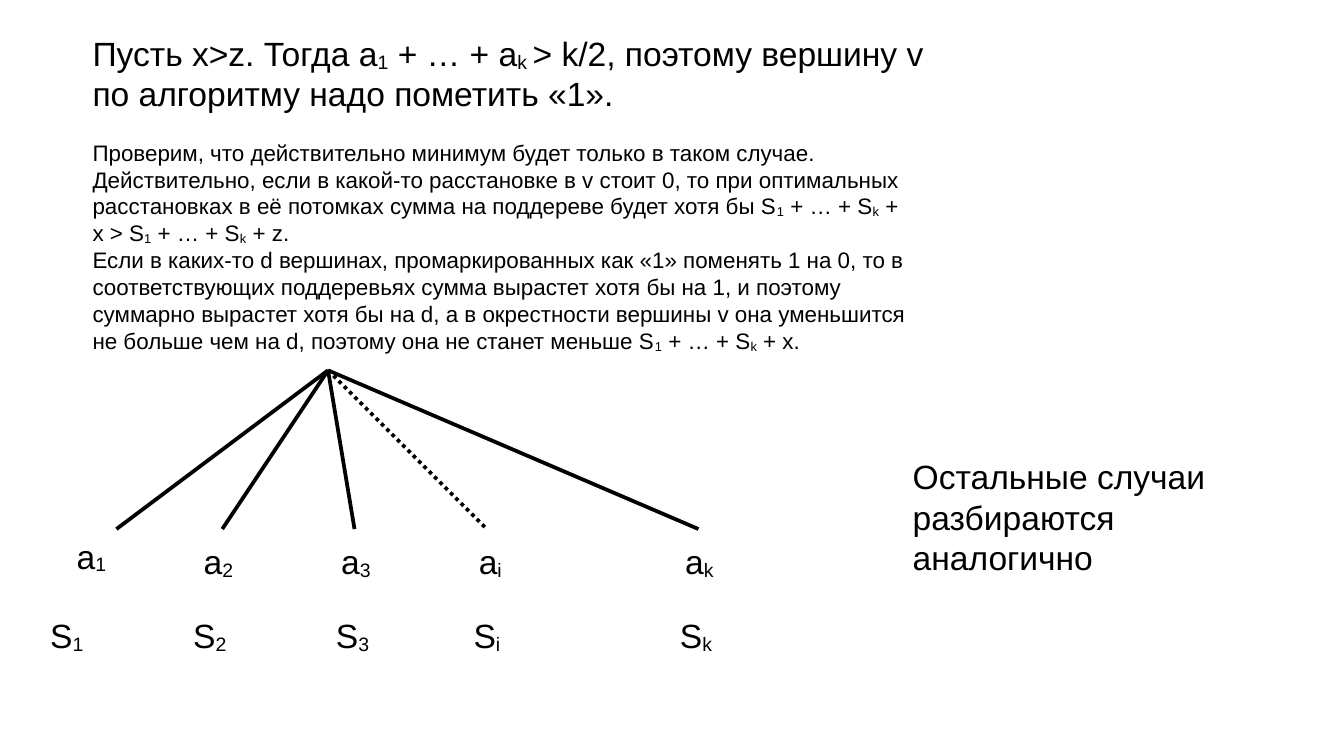
from lxml import etree
from pptx import Presentation
from pptx.dml.color import RGBColor
from pptx.enum.dml import MSO_LINE
from pptx.enum.shapes import MSO_CONNECTOR
from pptx.oxml.ns import qn
from pptx.util import Cm, Pt

STRAIGHT = MSO_CONNECTOR.STRAIGHT
DOTTED = MSO_LINE.ROUND_DOT
BLACK = RGBColor(0, 0, 0)
FONT = "Arial"
SUBSCRIPT = "-8000"

ROOT = (6.2, 7)
LEAF_Y = 10
SUM_Y = 11.5

# index, line end x, label left, label top, sum left, dotted
BRANCHES = [
    ("1", 2.2, 1.2, 10, 0.7, False),
    ("2", 4.2, 3.6, 10.1, 3.4, False),
    ("3", 6.7, 6.2, 10.1, 6.1, False),
    ("i", 9.2, 8.8, 10.1, 8.7, True),
    ("k", 13.2, 12.7, 10.1, 12.6, False),
]

CLAIM = ("Пусть x>z. Тогда a_1_ + … + a_k _> k/2, поэтому вершину v "
         "по алгоритму надо пометить «1».")
PROOF = [
    "Проверим, что действительно минимум будет только в таком случае. "
    "Действительно, если в какой-то расстановке в v стоит 0, то при "
    "оптимальных расстановках в её потомках сумма на поддереве будет "
    "хотя бы S_1_ + … + S_k_ + x > S_1_ + … + S_k_ + z.",
    "Если в каких-то d вершинах, промаркированных как «1» поменять 1 на 0, "
    "то в соответствующих поддеревьях сумма вырастет хотя бы на 1, и поэтому "
    "суммарно вырастет хотя бы на d, а в окрестности вершины v она "
    "уменьшится не больше чем на d, поэтому она не станет меньше "
    "S_1_ + … + S_k_ + x.",
]
REMARK = "Остальные случаи разбираются аналогично"


def add_marked_runs(p, text, size):
    for i, part in enumerate(text.split("_")):
        if not part:
            continue
        r = p.add_run()
        r.text = part
        r.font.name = FONT
        r.font.size = Pt(size)
        r.font.color.rgb = BLACK
        if i % 2:
            r._r.get_or_add_rPr().set("baseline", SUBSCRIPT)


def add_text(s, left, top, width, height, paragraphs, size=18):
    tf = s.shapes.add_textbox(Cm(left), Cm(top), Cm(width), Cm(height)).text_frame
    tf.word_wrap = True
    for i, text in enumerate(paragraphs):
        p = tf.add_paragraph() if i else tf.paragraphs[0]
        add_marked_runs(p, text, size)


def add_edge(s, end_x, dotted):
    x, y = ROOT
    c = s.shapes.add_connector(STRAIGHT, Cm(x), Cm(y), Cm(end_x), Cm(LEAF_Y))
    c.line.color.rgb = BLACK
    c.line.width = Pt(0)
    if dotted:
        c.line.dash_style = DOTTED
    etree.SubElement(c._element.spPr, qn("a:effectLst"))


def add_tree(s):
    for index, end_x, label_x, label_y, sum_x, dotted in BRANCHES:
        add_edge(s, end_x, dotted)
        add_text(s, label_x, label_y, 1.5, 0.97, [f"a_{index}_"])
        add_text(s, sum_x, SUM_Y, 2, 0.97, [f"S_{index}_"])


def main():
    prs = Presentation()
    prs.slide_width, prs.slide_height = Cm(25.4), Cm(14.29)
    s = prs.slides.add_slide(prs.slide_layouts[6])
    add_tree(s)
    add_text(s, 1.5, 0.5, 16.5, 1.68, [CLAIM])
    add_text(s, 1.5, 2.5, 16, 4.04, PROOF, size=12)
    add_text(s, 17, 8.5, 6.5, 2.39, [REMARK])
    prs.save("out.pptx")


if __name__ == "__main__":
    main()
